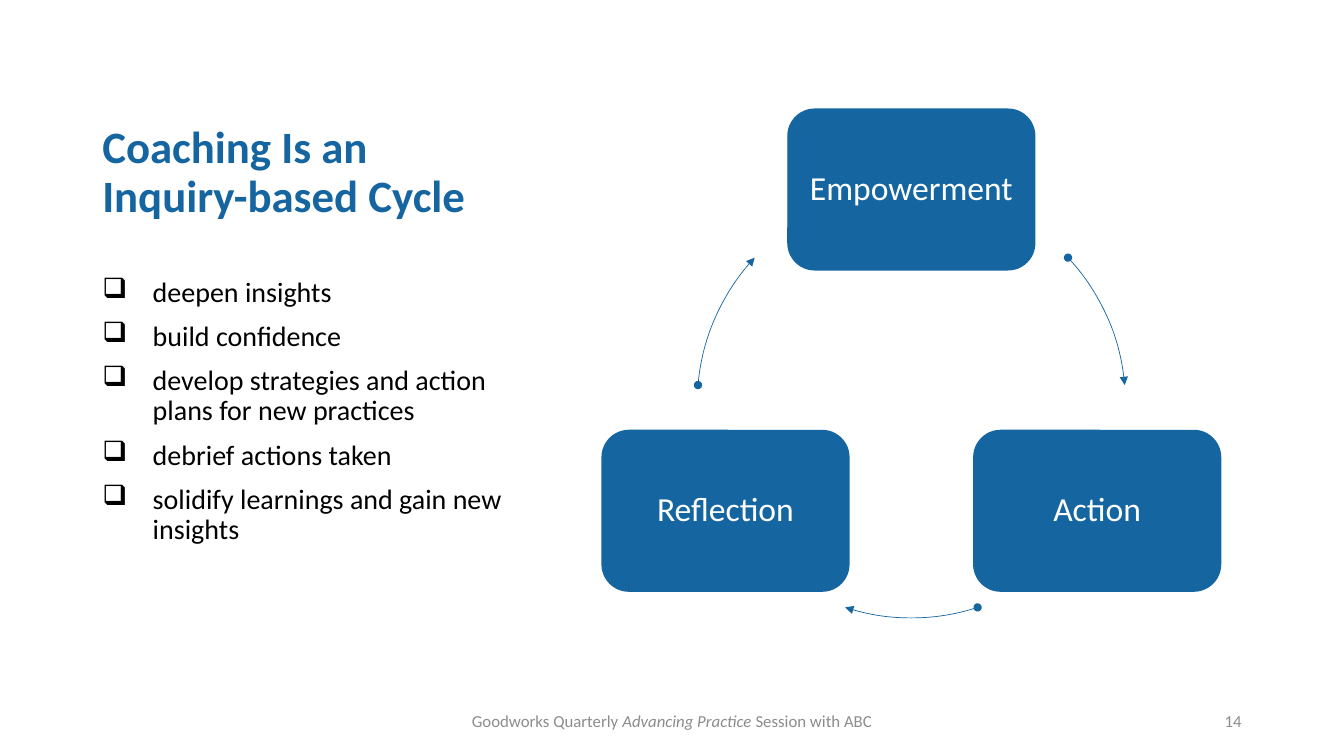
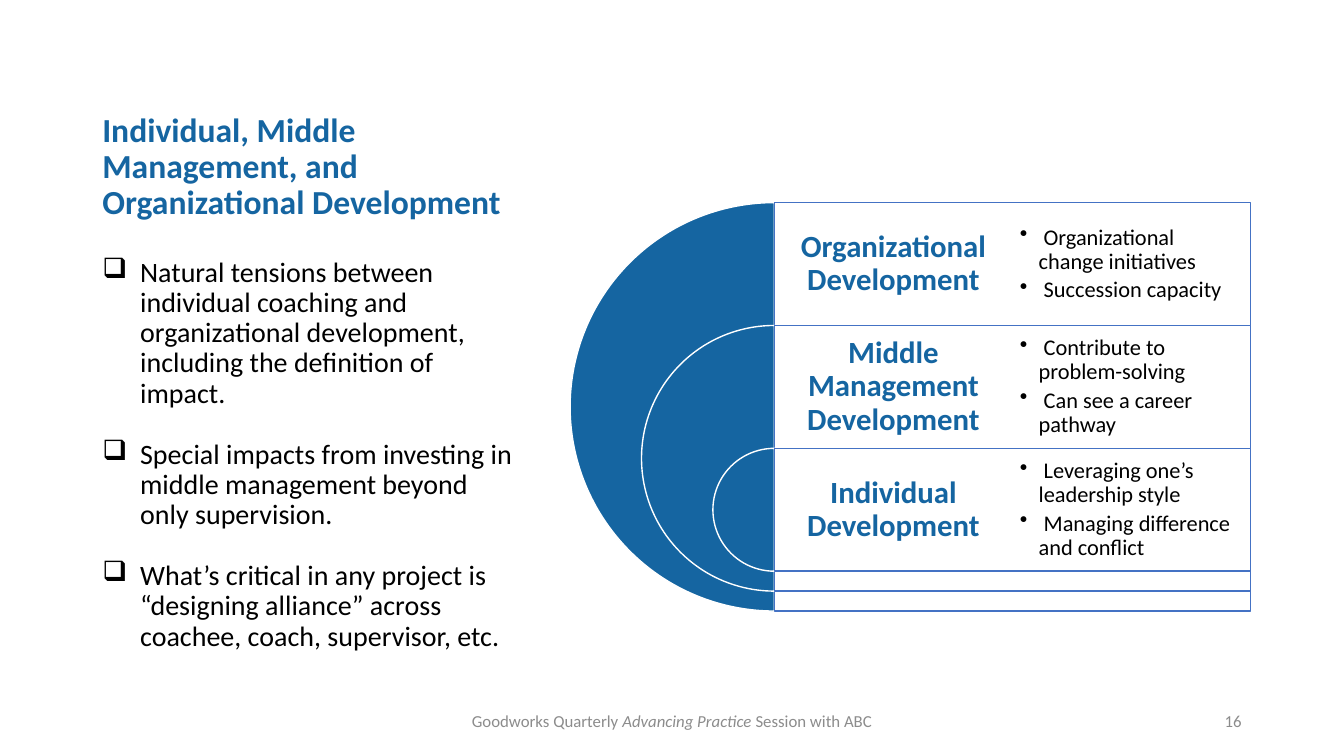
from collections import namedtuple

from lxml.etree import SubElement
from pptx import Presentation
from pptx.dml.color import RGBColor
from pptx.enum.shapes import MSO_SHAPE as Shape
from pptx.enum.text import MSO_ANCHOR as Anchor, PP_ALIGN as Align
from pptx.oxml.ns import qn
from pptx.util import Emu, Pt

Box = namedtuple("Box", "left top width height")

PX = 9525
COLORS = {
    "blue": "1565A1",
    "border": "4472C4",
    "white": "FFFFFF",
    "black": "000000",
    "grey": "8C8C8C",
}
TITLE_BOX = Box(88, 48, 413, 168)
FOOTER_BOX = Box(424, 667, 432, 38)
NUMBER_BOX = Box(904, 667, 288, 38)

FOOTER = [("Goodworks Quarterly ", False), ("Advancing Practice ", True), ("Session with ABC", False)]
TIGHT = {"line_spacing": 0.9}
CENTERED = {"alignment": Align.CENTER}
CENTERED_TIGHT = {**CENTERED, **TIGHT}

CYCLE_STEPS = ["Empowerment", "Action", "Reflection"]
CYCLE_ARCS = [(317, 355), (72, 108), (185, 223)]
CYCLE_GOALS = [
    "deepen insights",
    "build confidence",
    "develop strategies and action plans for new practices",
    "debrief actions taken",
    "solidify learnings and gain new insights",
]
TENSIONS = [
    "Natural tensions between individual coaching and organizational development, "
    "including the definition of impact.",
    "Special impacts from investing in middle management beyond only supervision.",
    "What’s critical in any project is “designing alliance” across coachee, coach, supervisor, etc.",
]
LEVELS = [
    ("Organizational Development",
     [" Organizational change initiatives", " Succession capacity"]),
    ("Middle Management Development",
     [" Contribute to problem-solving", " Can see a career pathway"]),
    ("Individual Development",
     [" Leveraging one’s leadership style", " Managing difference and conflict"]),
]


def apply_format(target, values):
    for name, value in values.items():
        setattr(target, name, value)


def color(name):
    return RGBColor.from_string(COLORS[name])


def place(box):
    return [Emu(round(length * PX)) for length in box]


def write(frame, paragraphs, size, ink, bold=False, layout=None, anchor=Anchor.TOP,
          margin=None, bullet=None, indent=0):
    apply_format(frame, {"word_wrap": True, "vertical_anchor": anchor})
    if margin is not None:
        sides = ("margin_left", "margin_top", "margin_right", "margin_bottom")
        apply_format(frame, dict.fromkeys(sides, Emu(margin * PX)))
    for index, runs in enumerate(paragraphs):
        paragraph = frame.add_paragraph() if index else frame.paragraphs[0]
        apply_format(paragraph, layout or {})
        if bullet:
            properties = paragraph._p.get_or_add_pPr()
            properties.set("marL", str(indent * PX))
            properties.set("indent", str(-indent * PX))
            SubElement(properties, qn("a:buChar"), char=bullet)
        for text, italic in [(runs, False)] if isinstance(runs, str) else runs:
            run = paragraph.add_run()
            run.text = text
            apply_format(run.font, {"name": "Calibri", "size": Pt(size), "bold": bold, "italic": italic})
            run.font.color.rgb = color(ink)


def add_text(slide, box, paragraphs, size, ink, **options):
    write(slide.shapes.add_textbox(*place(box)).text_frame, paragraphs, size, ink, **options)


def add_figure(slide, kind, box, fill, line, width=1, adjustments=()):
    shape = slide.shapes.add_shape(kind, *place(box))
    shape.shadow.inherit = False
    for index, value in enumerate(adjustments):
        shape.adjustments[index] = value
    if fill:
        shape.fill.solid()
        shape.fill.fore_color.rgb = color(fill)
    else:
        shape.fill.background()
    shape.line.color.rgb = color(line)
    shape.line.width = Pt(width)
    return shape


def angles(start, end):
    return start * 0.6, end * 0.6


def add_frame(presentation, title, size, number):
    slide = presentation.slides.add_slide(presentation.slide_layouts[6])
    add_text(slide, TITLE_BOX, [title], size, "blue", bold=True, layout=TIGHT, anchor=Anchor.BOTTOM)
    add_text(slide, FOOTER_BOX, [FOOTER], 12, "grey", layout=CENTERED, anchor=Anchor.MIDDLE)
    add_text(slide, NUMBER_BOX, [str(number)], 12, "grey",
             layout={"alignment": Align.RIGHT}, anchor=Anchor.MIDDLE)
    return slide


def add_checklist(slide, box, items, indent, after=0):
    layout = {**TIGHT, "space_before": Pt(10), "space_after": Pt(after)}
    add_text(slide, box, items, 20, "black", layout=layout, bullet="❑", indent=indent)


def add_cycle(slide, box):
    step_width, step_height = 235, 153
    radius = 204
    center_x = box.left + box.width / 2
    center_y = box.top + step_height / 2 + radius
    ring = Box(center_x - radius, center_y - radius, 2 * radius, 2 * radius)
    offsets = [(0, -radius), (177, radius / 2), (-177, radius / 2)]
    for label, (across, down), arc in zip(CYCLE_STEPS, offsets, CYCLE_ARCS):
        step = Box(center_x + across - step_width / 2, center_y + down - step_height / 2,
                   step_width, step_height)
        card = add_figure(slide, Shape.ROUNDED_RECTANGLE, step, "blue", "blue")
        write(card.text_frame, [label], 24, "white", layout=CENTERED_TIGHT,
              anchor=Anchor.MIDDLE, margin=5)
        arrow = add_figure(slide, Shape.ARC, ring, None, "blue", 0.5, angles(*arc))
        outline = arrow.element.spPr.find(qn("a:ln"))
        SubElement(outline, qn("a:headEnd"), type="oval")
        SubElement(outline, qn("a:tailEnd"), type="triangle")


def add_nested_levels(slide, box):
    row_height, shrink = 117, 136
    middle = box.left + box.height / 2
    panel_width = box.left + box.width - middle
    column = panel_width / 2
    for index, (label, points) in enumerate(LEVELS):
        top = box.top + index * row_height
        diameter = box.height - index * shrink
        add_figure(slide, Shape.PIE, Box(middle - diameter / 2, top, diameter, diameter),
                   "blue", "white", adjustments=angles(90, 270))
        panel = add_figure(slide, Shape.RECTANGLE, Box(middle, top, panel_width, diameter),
                           "white", "border")
        tint = panel.element.spPr.find(qn("a:solidFill")).find(qn("a:srgbClr"))
        SubElement(tint, qn("a:alpha"), val="90000")
        add_text(slide, Box(middle, top, column, row_height), [label], 22, "blue", bold=True,
                 layout=CENTERED_TIGHT, anchor=Anchor.MIDDLE, margin=8)
        add_text(slide, Box(middle + column, top, column, row_height), points, 16, "black",
                 layout={**TIGHT, "space_after": Pt(3)}, anchor=Anchor.MIDDLE, margin=7,
                 bullet="•", indent=18)


def add_cycle_slide(presentation):
    slide = add_frame(presentation, "Coaching Is an Inquiry-based Cycle", 32, 14)
    add_checklist(slide, Box(88, 260, 413, 356), CYCLE_GOALS, 48)
    add_cycle(slide, Box(575, 104, 586, 488))


def add_levels_slide(presentation):
    slide = add_frame(presentation, "Individual, Middle Management, and Organizational Development", 24, 16)
    add_checklist(slide, Box(88, 241, 413, 400), TENSIONS, 36, 12)
    add_nested_levels(slide, Box(543, 193, 648, 389))


def main():
    presentation = Presentation()
    apply_format(presentation, {"slide_width": Emu(1280 * PX), "slide_height": Emu(720 * PX)})
    add_cycle_slide(presentation)
    add_levels_slide(presentation)
    presentation.save("out.pptx")


if __name__ == "__main__":
    main()
